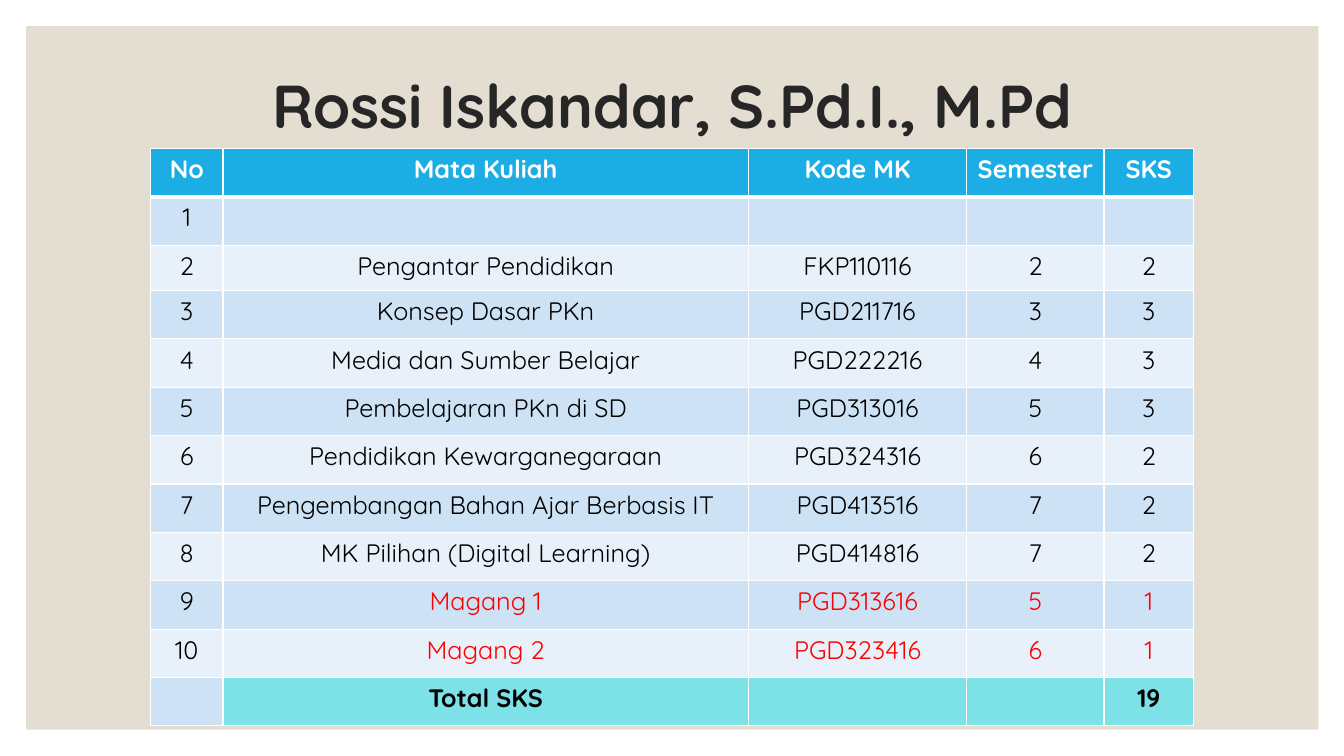
from lxml.etree import SubElement
from pptx import Presentation
from pptx.dml.color import RGBColor
from pptx.enum.shapes import MSO_SHAPE
from pptx.enum.text import MSO_ANCHOR, MSO_AUTO_SIZE, PP_ALIGN
from pptx.oxml.ns import qn
from pptx.util import Pt

WHITE = RGBColor(0xFF, 0xFF, 0xFF)
BLACK = RGBColor(0x00, 0x00, 0x00)
RED = RGBColor(0xFF, 0x00, 0x00)
CHARCOAL = RGBColor(0x26, 0x26, 0x26)
SAND = RGBColor(0xE3, 0xDE, 0xD1)
BLUE = RGBColor(0x1C, 0xAD, 0xE4)
BAND_DARK = RGBColor(0xCD, 0xE3, 0xF5)
BAND_LIGHT = RGBColor(0xE8, 0xF1, 0xFA)
TURQUOISE = RGBColor(0x7D, 0xE2, 0xE7)

TITLE = "Rossi Iskandar, S.Pd.I., M.Pd"
COLUMN_WIDTHS = [51.84, 375.12, 156.24, 97.92, 64.08]
ROW_HEIGHT = 34.56
SHORT_ROW, SHORT_HEIGHT = 2, 32.4
COURSES = [
    ("No", "Mata Kuliah", "Kode MK", "Semester", "SKS"),
    ("1", "", "", "", ""),
    ("2", "Pengantar Pendidikan", "FKP110116", "2", "2"),
    ("3", "Konsep Dasar PKn", "PGD211716", "3", "3"),
    ("4", "Media dan Sumber Belajar", "PGD222216", "4", "3"),
    ("5", "Pembelajaran PKn di SD", "PGD313016", "5", "3"),
    ("6", "Pendidikan Kewarganegaraan", "PGD324316", "6", "2"),
    ("7", "Pengembangan Bahan Ajar Berbasis IT", "PGD413516", "7", "2"),
    ("8", "MK Pilihan (Digital Learning)", "PGD414816", "7", "2"),
    ("9", "Magang 1", "PGD313616", "5", "1"),
    ("10", "Magang 2", "PGD323416", "6", "1"),
    ("", "Total SKS", "", "", "19"),
]
TOTAL_ROW = len(COURSES) - 1


def cell_style(row, col):
    if row == 0:
        return BLUE, WHITE, True
    if row == TOTAL_ROW and col > 0:
        return TURQUOISE, BLACK, True
    fill = BAND_DARK if row % 2 else BAND_LIGHT
    internship = col > 0 and COURSES[row][1].startswith("Magang")
    return fill, RED if internship else BLACK, False


class SlideBuilder:
    font = "Quicksand"

    def __init__(self, slide):
        self.s = slide

    def put_text(self, tf, text, color, size, bold):
        p = tf.paragraphs[0]
        p.alignment = PP_ALIGN.CENTER
        font = p.font
        if text:
            r = p.add_run()
            r.text = text
            font = r.font
        for name, value in {"name": self.font, "size": Pt(size), "bold": bold}.items():
            setattr(font, name, value)
        font.color.rgb = color
        return p

    def panel(self, left, top, width, height, color):
        sp = self.s.shapes.add_shape(
            MSO_SHAPE.RECTANGLE, Pt(left), Pt(top), Pt(width), Pt(height))
        sp.shadow.inherit = False
        sp.fill.solid()
        sp.fill.fore_color.rgb = color
        sp.line.fill.background()
        self.s.shapes.title.element.addprevious(sp.element)

    def title(self, text, left, top, width, height):
        sp = self.s.shapes.title
        box = {"left": left, "top": top, "width": width, "height": height}
        for name, value in box.items():
            setattr(sp, name, Pt(value))
        tf = sp.text_frame
        frame = {"word_wrap": True, "auto_size": MSO_AUTO_SIZE.NONE,
                 "vertical_anchor": MSO_ANCHOR.MIDDLE}
        for name, value in frame.items():
            setattr(tf, name, value)
        self.put_text(tf, text, CHARCOAL, 43.2, True).line_spacing = 0.9

    def borders(self, cell, widths):
        tc_pr = cell._tc.get_or_add_tcPr()
        for i, (side, width) in enumerate(widths.items()):
            ln = SubElement(tc_pr, qn(f"a:ln{side}"), w=str(Pt(width)))
            fill = SubElement(ln, qn("a:solidFill"))
            SubElement(fill, qn("a:srgbClr"), val=str(WHITE))
            tc_pr.insert(i, ln)

    def table(self, rows, left, top):
        heights = [SHORT_HEIGHT if i == SHORT_ROW else ROW_HEIGHT for i in range(len(rows))]
        table = self.s.shapes.add_table(
            len(rows), len(COLUMN_WIDTHS), Pt(left), Pt(top),
            Pt(sum(COLUMN_WIDTHS)), Pt(sum(heights))).table
        for column, width in zip(table.columns, COLUMN_WIDTHS):
            column.width = Pt(width)
        for i, (row, height) in enumerate(zip(rows, heights)):
            table.rows[i].height = Pt(height)
            for j, text in enumerate(row):
                fill, color, bold = cell_style(i, j)
                cell = table.cell(i, j)
                cell.fill.solid()
                cell.fill.fore_color.rgb = fill
                self.put_text(cell.text_frame, text, color, 18, bold)
                self.borders(cell, {"L": 1, "R": 1, "T": 3 if i == 1 else 1,
                                    "B": 3 if i == 0 else 1})


def main():
    prs = Presentation()
    prs.slide_width, prs.slide_height = Pt(960), Pt(540)
    builder = SlideBuilder(prs.slides.add_slide(prs.slide_layouts[5]))
    builder.panel(18.72, 18.72, 923.04, 502.56, SAND)
    builder.title(TITLE, 84, 50.4, 792, 55.44)
    builder.table(COURSES, 107.5, 106)
    prs.save("out.pptx")


if __name__ == "__main__":
    main()
